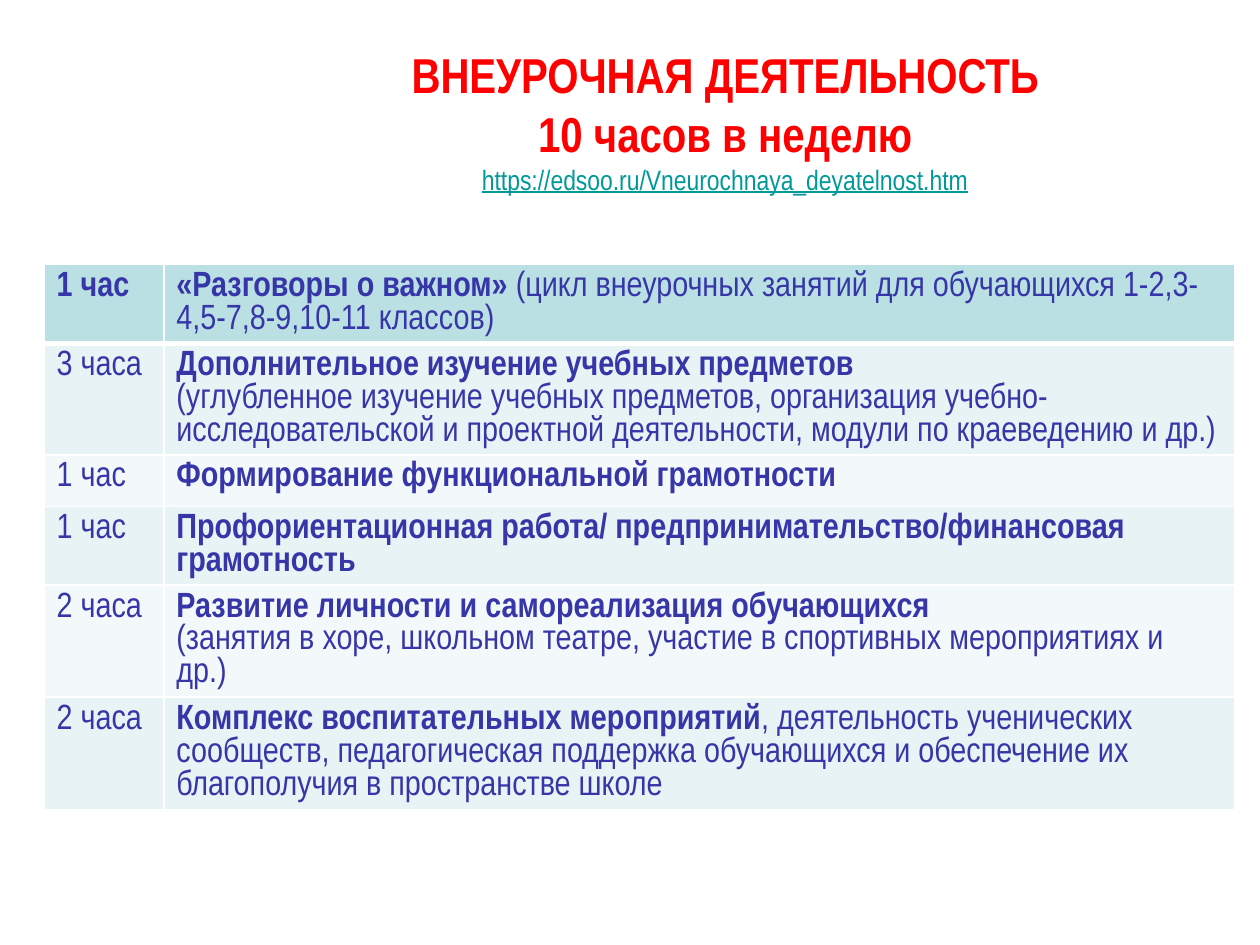
from dataclasses import dataclass

from lxml.etree import SubElement as Sub
from pptx import Presentation
from pptx.dml.color import RGBColor as RGB
from pptx.enum.text import MSO_ANCHOR as Anchor, MSO_AUTO_SIZE as Fit, PP_ALIGN as Align
from pptx.oxml.ns import qn
from pptx.util import Inches, Pt


@dataclass(frozen=True)
class Theme:
    font: str = "Arial Narrow"
    ink: str = "3636A8"
    red: str = "FF0000"
    link: str = "009999"
    head: str = "BBE0E3"
    bands: tuple = ("E7F3F4", "F3F9FA")
    rule: str = "FFFFFF"
    title: int = 28
    body: int = 20
    note: int = 16
    lead: float = 1.0


THEME = Theme()

TITLE = ["ВНЕУРОЧНАЯ ДЕЯТЕЛЬНОСТЬ", "10 часов в неделю"]
LINK = "https://edsoo.ru/Vneurochnaya_deyatelnost.htm"

# Each row: hours, bold topic, text on the same line, text on a new line
ROWS = [
    ("1 час", "«Разговоры о важном» ",
     "(цикл внеурочных занятий для обучающихся 1-2,3-4,5-7,8-9,10-11 классов)", ""),
    ("3 часа", "Дополнительное изучение учебных предметов", "",
     "(углубленное изучение учебных предметов, организация учебно-исследовательской "
     "и проектной деятельности, модули по краеведению и др.)"),
    ("1 час", "Формирование функциональной грамотности", "", ""),
    ("1 час", "Профориентационная работа/ предпринимательство/финансовая грамотность", "", ""),
    ("2 часа", "Развитие личности и самореализация обучающихся", "",
     "(занятия в хоре, школьном театре, участие в спортивных мероприятиях и др.)"),
    ("2 часа", "Комплекс воспитательных мероприятий",
     ", деятельность ученических сообществ, педагогическая поддержка обучающихся "
     "и обеспечение их благополучия в пространстве школе", ""),
]
COLS = (0.95, 8.5)
HEIGHTS = (0.61, 0.88, 0.41, 0.62, 0.89, 0.89)


def style(run, size, color, bold=False):
    font = run.font
    font.name, font.size, font.bold = THEME.font, Pt(size), bold
    font.color.rgb = RGB.from_string(color)


def edge(cell, top, base):
    """Draw the four cell borders with the given top and bottom widths."""
    props = cell._tc.get_or_add_tcPr()
    for side, width in (("L", 1), ("R", 1), ("T", top), ("B", base)):
        line = Sub(props, qn("a:ln" + side), w=str(Pt(width)))
        fill = Sub(line, qn("a:solidFill"))
        Sub(fill, qn("a:srgbClr"), val=THEME.rule)


def write(cell, lines):
    """Fill a cell with lines, each a list of (text, bold) pieces."""
    frame = cell.text_frame
    for i, line in enumerate(lines):
        para = frame.add_paragraph() if i else frame.paragraphs[0]
        para.line_spacing = THEME.lead
        for text, bold in line:
            run = para.add_run()
            run.text = text
            style(run, THEME.body, THEME.ink, bold)


def add_title(slide, left, top, width, height):
    shape = slide.shapes.title
    shape.left, shape.top = Inches(left), Inches(top)
    shape.width, shape.height = Inches(width), Inches(height)
    frame = shape.text_frame
    frame.word_wrap, frame.auto_size = True, Fit.NONE
    frame.vertical_anchor = Anchor.MIDDLE
    frame.text = "\v".join(TITLE + [LINK])
    para = frame.paragraphs[0]
    para.alignment = Align.CENTER
    *heads, link = para.runs
    for run in heads:
        style(run, THEME.title, THEME.red, True)
    style(link, THEME.note, THEME.link)
    link.font.underline = True


def add_plan(slide, left, top):
    table = slide.shapes.add_table(
        len(ROWS), len(COLS), Inches(left), Inches(top),
        Inches(sum(COLS)), Inches(sum(HEIGHTS))).table
    for col, width in zip(table.columns, COLS):
        col.width = Inches(width)
    for i, (hours, topic, tail, extra) in enumerate(ROWS):
        table.rows[i].height = Inches(HEIGHTS[i])
        lines = [[(topic, True)]]
        if tail:
            lines[0].append((tail, False))
        if extra:
            lines.append([(extra, False)])
        color = THEME.bands[(i - 1) % 2] if i else THEME.head
        # A thick rule parts the first row from the rest
        top_w, base_w = (3 if i == 1 else 1), (3 if i == 0 else 1)
        for j, text in enumerate(([[(hours, i == 0)]], lines)):
            cell = table.cell(i, j)
            write(cell, text)
            edge(cell, top_w, base_w)
            cell.fill.solid()
            cell.fill.fore_color.rgb = RGB.from_string(color)


def main():
    deck = Presentation()
    deck.slide_width, deck.slide_height = Inches(10), Inches(7.5)
    slide = deck.slides.add_slide(deck.slide_layouts[5])
    add_title(slide, 2.01, 0.33, 7.49, 1.25)
    add_plan(slide, 0.35, 2.1)
    deck.save("out.pptx")


if __name__ == "__main__":
    main()
